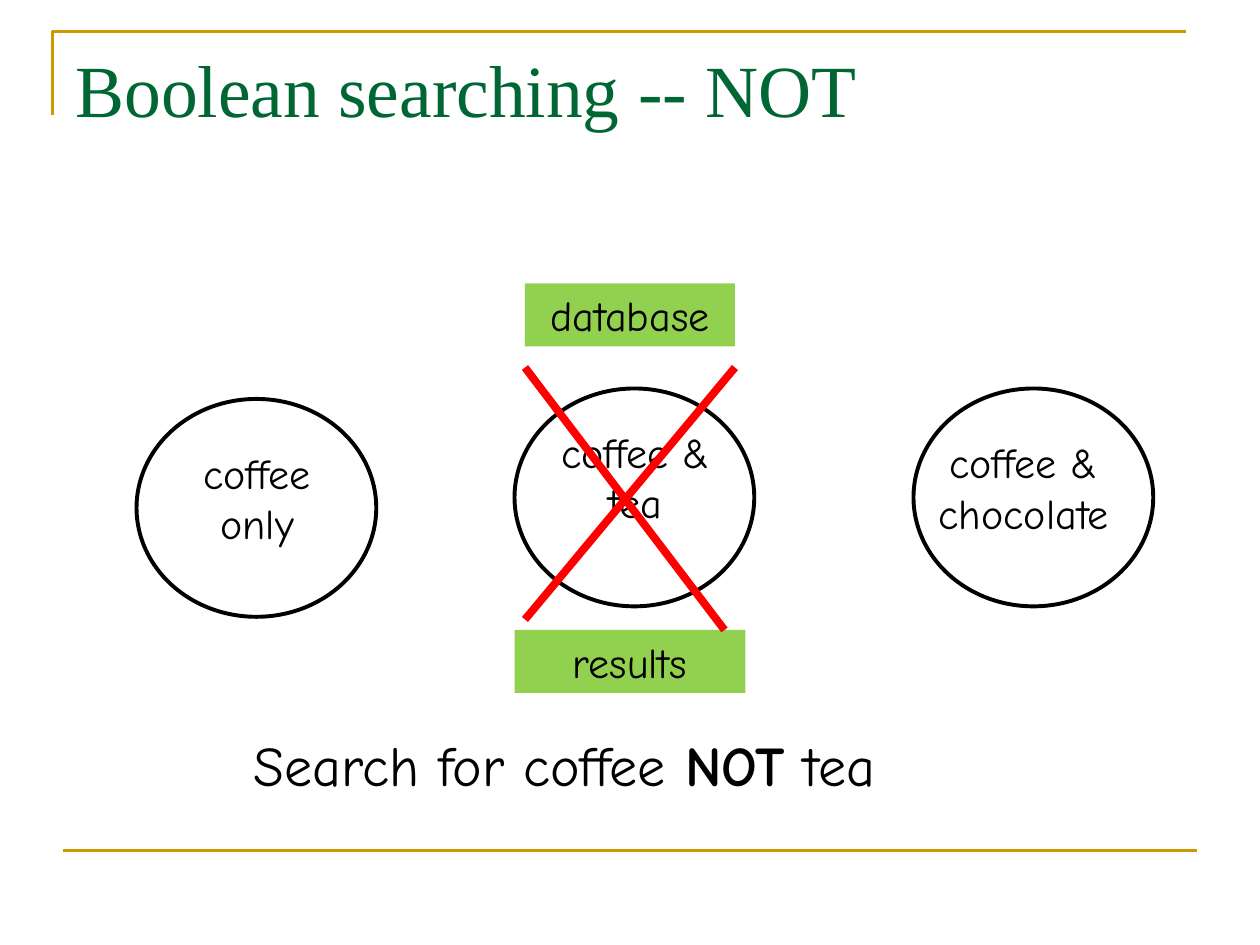
from dataclasses import dataclass

from lxml import etree
from pptx import Presentation
from pptx.dml.color import RGBColor
from pptx.enum.shapes import MSO_CONNECTOR, MSO_SHAPE
from pptx.enum.text import MSO_ANCHOR, MSO_AUTO_SIZE, PP_ALIGN
from pptx.oxml.ns import qn
from pptx.util import Pt

STRAIGHT = MSO_CONNECTOR.STRAIGHT
OVAL, RECTANGLE = MSO_SHAPE.OVAL, MSO_SHAPE.RECTANGLE
TOP = MSO_ANCHOR.TOP
GROW, FIXED = MSO_AUTO_SIZE.SHAPE_TO_FIT_TEXT, MSO_AUTO_SIZE.NONE
LEFT, CENTER = PP_ALIGN.LEFT, PP_ALIGN.CENTER

BLACK, GOLD, GREEN, LIME, RED = "000000", "CC9900", "006633", "92D050", "FF0000"
HAND, SERIF = "Comic Neue", "Times New Roman"


@dataclass(frozen=True)
class Box:
    left: float
    top: float
    width: float
    height: float

    def lengths(self) -> list:
        return [Pt(v) for v in (self.left, self.top, self.width, self.height)]


@dataclass(frozen=True)
class Wording:
    runs: tuple
    size: float = 24
    font: str = HAND
    color: str = BLACK
    align: int = CENTER
    fit: int = GROW


@dataclass(frozen=True)
class Stroke:
    start: tuple
    end: tuple
    color: str
    width: float


def rgb(code: str) -> RGBColor:
    return RGBColor.from_string(code)


def apply(target, values: dict) -> None:
    for name, value in values.items():
        setattr(target, name, value)


def set_line(line, color: str, width: float) -> None:
    line.color.rgb = rgb(color)
    line.width = Pt(width)


def write(holder, wording: Wording) -> None:
    frame = holder.text_frame
    apply(frame, {"word_wrap": True, "auto_size": wording.fit, "vertical_anchor": TOP})
    paragraph = frame.paragraphs[0]
    paragraph.alignment = wording.align
    for text, bold in wording.runs:
        run = paragraph.add_run()
        run.text = text
        apply(run.font, {"name": wording.font, "size": Pt(wording.size), "bold": bold})
        run.font.color.rgb = rgb(wording.color)


def add_text(slide, box: Box, wording: Wording) -> None:
    write(slide.shapes.add_textbox(*box.lengths()), wording)


def add_circle(slide, box: Box) -> None:
    circle = slide.shapes.add_shape(OVAL, *box.lengths())
    circle.shadow.inherit = False
    circle.fill.background()
    set_line(circle.line, BLACK, 2.25)


def add_tag(slide, box: Box, text: str) -> None:
    tag = slide.shapes.add_shape(RECTANGLE, *box.lengths())
    tag.shadow.inherit = False
    tag.fill.solid()
    tag.fill.fore_color.rgb = rgb(LIME)
    tag.line.fill.background()
    write(tag, Wording(((text, False),)))


def add_stroke(slide, stroke: Stroke) -> None:
    ends = [Pt(v) for v in stroke.start + stroke.end]
    connector = slide.shapes.add_connector(STRAIGHT, *ends)
    set_line(connector.line, stroke.color, stroke.width)
    etree.SubElement(connector._element.spPr, qn("a:effectLst"))


def add_corner(slide, points: list) -> None:
    start, *rest = [(Pt(x), Pt(y)) for x, y in points]
    builder = slide.shapes.build_freeform(*start)
    builder.add_line_segments(rest, close=False)
    corner = builder.convert_to_shape()
    corner.shadow.inherit = False
    corner.fill.background()
    set_line(corner.line, GOLD, 1.5)


CIRCLE_CORNERS = [(78, 228), (294, 222), (522, 222)]
CIRCLE_LABELS = [
    (Box(96, 252, 102, 65.5), "coffee only"),
    (Box(312, 240, 102, 65.5), "coffee & tea"),
    (Box(522, 246, 126, 65.5), "coffee & chocolate"),
]
TAGS = [
    (Box(300, 162, 120, 36), "database"),
    (Box(294, 360, 132, 36), "results"),
]
CROSS = [
    Stroke((420, 210), (300, 354), RED, 4.5),
    Stroke((300, 210), (414, 360), RED, 4.5),
]
TITLE = Wording(
    (("Boolean searching -- NOT", False),), 42, SERIF, GREEN, LEFT, FIXED
)
QUERY = Wording(
    (("Search for coffee ", False), ("NOT", True), (" tea", False)), 32, align=LEFT
)


def main() -> None:
    deck = Presentation()
    apply(deck, {"slide_width": Pt(720), "slide_height": Pt(540)})
    slide = deck.slides.add_slide(deck.slide_layouts[6])

    add_corner(slide, [(30, 66), (30, 18), (678, 18)])
    add_stroke(slide, Stroke((36, 486), (684, 486), GOLD, 1.5))
    add_text(slide, Box(36, 21.6, 648, 90), TITLE)
    for box, text in CIRCLE_LABELS:
        add_text(slide, box, Wording(((text, False),)))
    add_text(slide, Box(138, 414, 450, 45), QUERY)
    for left, top in CIRCLE_CORNERS:
        add_circle(slide, Box(left, top, 137, 124.5))
    for box, text in TAGS:
        add_tag(slide, box, text)
    for stroke in CROSS:
        add_stroke(slide, stroke)

    deck.save("out.pptx")


if __name__ == "__main__":
    main()
